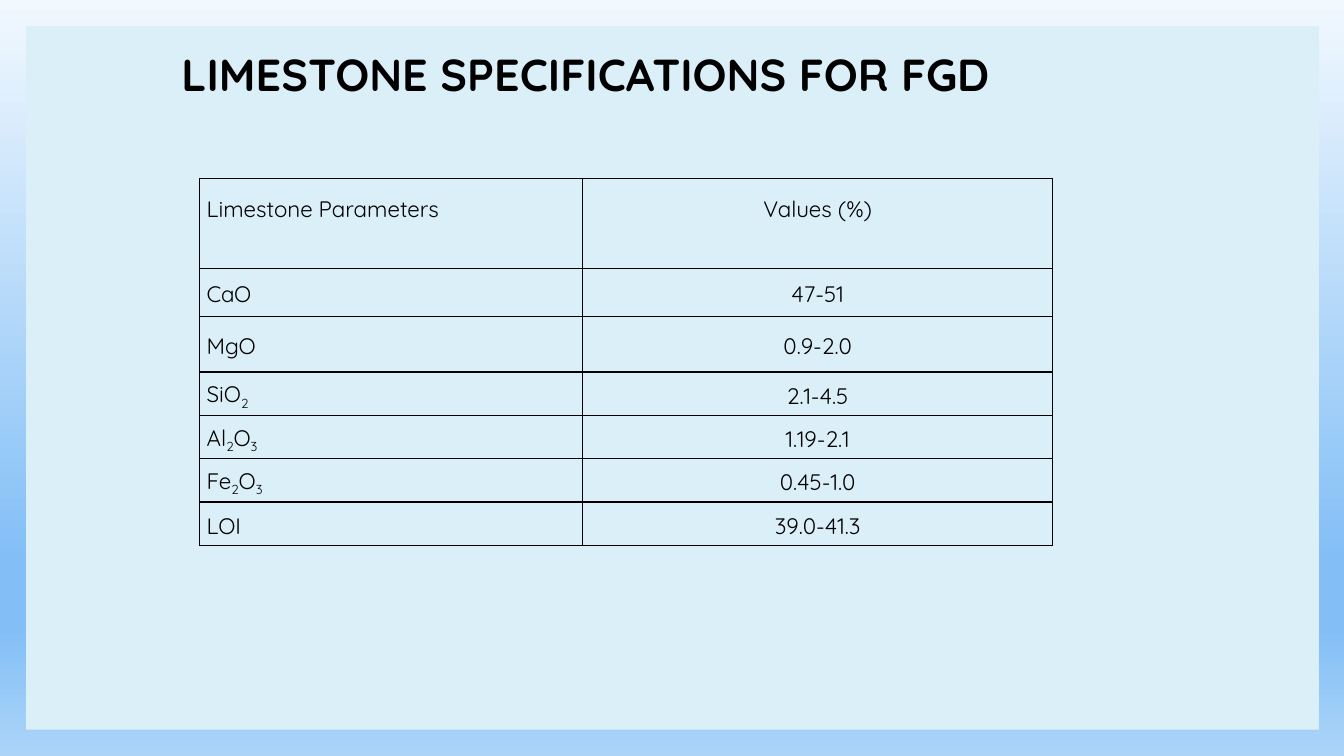
"""Build the slide with the limestone specification table."""
import dataclasses
import typing

import pptx
import pptx.dml.color
import pptx.enum.shapes
import pptx.enum.text
import pptx.oxml
import pptx.oxml.ns
import pptx.util

Inches = pptx.util.Inches
Align = pptx.enum.text.PP_ALIGN
Anchor = pptx.enum.text.MSO_ANCHOR

FONT = "Quicksand"
BLACK = "000000"
PANEL = "DBEFF9"
BACKDROP = [(0, "F1F8FE"), (74, "83BFF6"), (83, "83BFF6"), (100, "ACD4F9")]
COLUMN_WIDTHS = [3.8, 4.66]
COLUMN_ALIGNS = [Align.LEFT, Align.CENTER]
LINE_HEIGHT = 0.32


@dataclasses.dataclass(frozen=True)
class SpecRow:
    parameter: str
    value: str
    height: float = 0.43
    bottom: float = 0
    formula: bool = True


ROWS = [
    SpecRow("Limestone Parameters", "Values (%)", 0.89, LINE_HEIGHT, False),
    SpecRow("CaO", "47-51", 0.48),
    SpecRow("MgO", "0.9-2.0", 0.55),
    SpecRow("SiO2", "2.1-4.5"),
    SpecRow("Al2O3", "1.19-2.1"),
    SpecRow("Fe2O3", "0.45-1.0"),
    SpecRow("LOI", "39.0-41.3"),
]


def colour(code: str) -> pptx.dml.color.RGBColor:
    return pptx.dml.color.RGBColor.from_string(code)


def apply(target: typing.Any, values: dict[str, typing.Any]) -> None:
    for name, value in values.items():
        setattr(target, name, value)


def add_span(para: typing.Any, text: str, size: int, bold: bool = False) -> typing.Any:
    span = para.add_run()
    span.text = text
    apply(span.font, {"name": FONT, "size": pptx.util.Pt(size), "bold": bold})
    span.font.color.rgb = colour(BLACK)
    return span


def add_formula(para: typing.Any, formula: str, size: int) -> None:
    pieces: list[str] = []
    for letter in formula:
        if pieces and letter.isdigit() == pieces[-1].isdigit():
            pieces[-1] += letter
        else:
            pieces.append(letter)
    for piece in pieces:
        span = add_span(para, piece, size)
        if piece.isdigit():
            span._r.get_or_add_rPr().set("baseline", "-25000")


def paint_backdrop(page: typing.Any) -> None:
    fill = page.background.fill
    fill.gradient()
    fill.gradient_angle = 270
    stops = page.element.find(".//" + pptx.oxml.ns.qn("a:gsLst"))
    for stop in list(stops):
        stops.remove(stop)
    for position, code in BACKDROP:
        stops.append(pptx.oxml.parse_xml(
            f'<a:gs {pptx.oxml.ns.nsdecls("a")} pos="{position * 1000}">'
            f'<a:srgbClr val="{code}"/></a:gs>'))


def add_title(page: typing.Any, text: str) -> None:
    title = page.shapes.title
    apply(title, {"left": Inches(1.7), "top": Inches(0.41),
                  "width": Inches(9.25), "height": Inches(0.64)})
    apply(title.text_frame, {"word_wrap": True, "vertical_anchor": Anchor.TOP,
                             "auto_size": pptx.enum.text.MSO_AUTO_SIZE.NONE})
    para = title.text_frame.paragraphs[0]
    para.alignment = Align.LEFT
    add_span(para, text, 32, True)


def add_panel(page: typing.Any) -> None:
    panel = page.shapes.add_shape(
        pptx.enum.shapes.MSO_SHAPE.RECTANGLE,
        Inches(0.26), Inches(0.26), Inches(12.82), Inches(6.98))
    panel.shadow.inherit = False
    panel.fill.solid()
    panel.fill.fore_color.rgb = colour(PANEL)
    panel.line.fill.background()
    page.shapes.title.element.addprevious(panel.element)


def format_cell(cell: typing.Any, bottom: float) -> None:
    apply(cell, {"vertical_anchor": Anchor.MIDDLE,
                 "margin_left": Inches(0.07), "margin_right": Inches(0.07),
                 "margin_top": 0, "margin_bottom": Inches(bottom)})
    cell.fill.solid()
    cell.fill.fore_color.rgb = colour(PANEL)
    properties = cell._tc.get_or_add_tcPr()
    for index, side in enumerate(["lnL", "lnR", "lnT", "lnB"]):
        properties.insert(index, pptx.oxml.parse_xml(
            f'<a:{side} {pptx.oxml.ns.nsdecls("a")} w="12700"><a:solidFill>'
            f'<a:srgbClr val="{BLACK}"/></a:solidFill></a:{side}>'))


def add_spec_table(page: typing.Any) -> None:
    table = page.shapes.add_table(
        len(ROWS), len(COLUMN_WIDTHS), Inches(1.98), Inches(1.77),
        Inches(sum(COLUMN_WIDTHS)), Inches(sum(row.height for row in ROWS))).table
    apply(table, {"first_row": False, "horz_banding": False})
    for column, width in zip(table.columns, COLUMN_WIDTHS):
        column.width = Inches(width)
    for row_index, row in enumerate(ROWS):
        table.rows[row_index].height = Inches(row.height)
        for column_index, text in enumerate([row.parameter, row.value]):
            cell = table.cell(row_index, column_index)
            format_cell(cell, row.bottom)
            para = cell.text_frame.paragraphs[0]
            apply(para, {"alignment": COLUMN_ALIGNS[column_index], "line_spacing": 1.15})
            if row.formula and column_index == 0:
                add_formula(para, text, 16)
            else:
                add_span(para, text, 16)


def main() -> None:
    deck = pptx.Presentation()
    apply(deck, {"slide_width": Inches(13.33), "slide_height": Inches(7.5)})
    page = deck.slides.add_slide(deck.slide_layouts.get_by_name("Title Only"))
    paint_backdrop(page)
    add_title(page, "LIMESTONE SPECIFICATIONS FOR FGD")
    add_panel(page)
    add_spec_table(page)
    deck.save("out.pptx")


if __name__ == "__main__":
    main()
